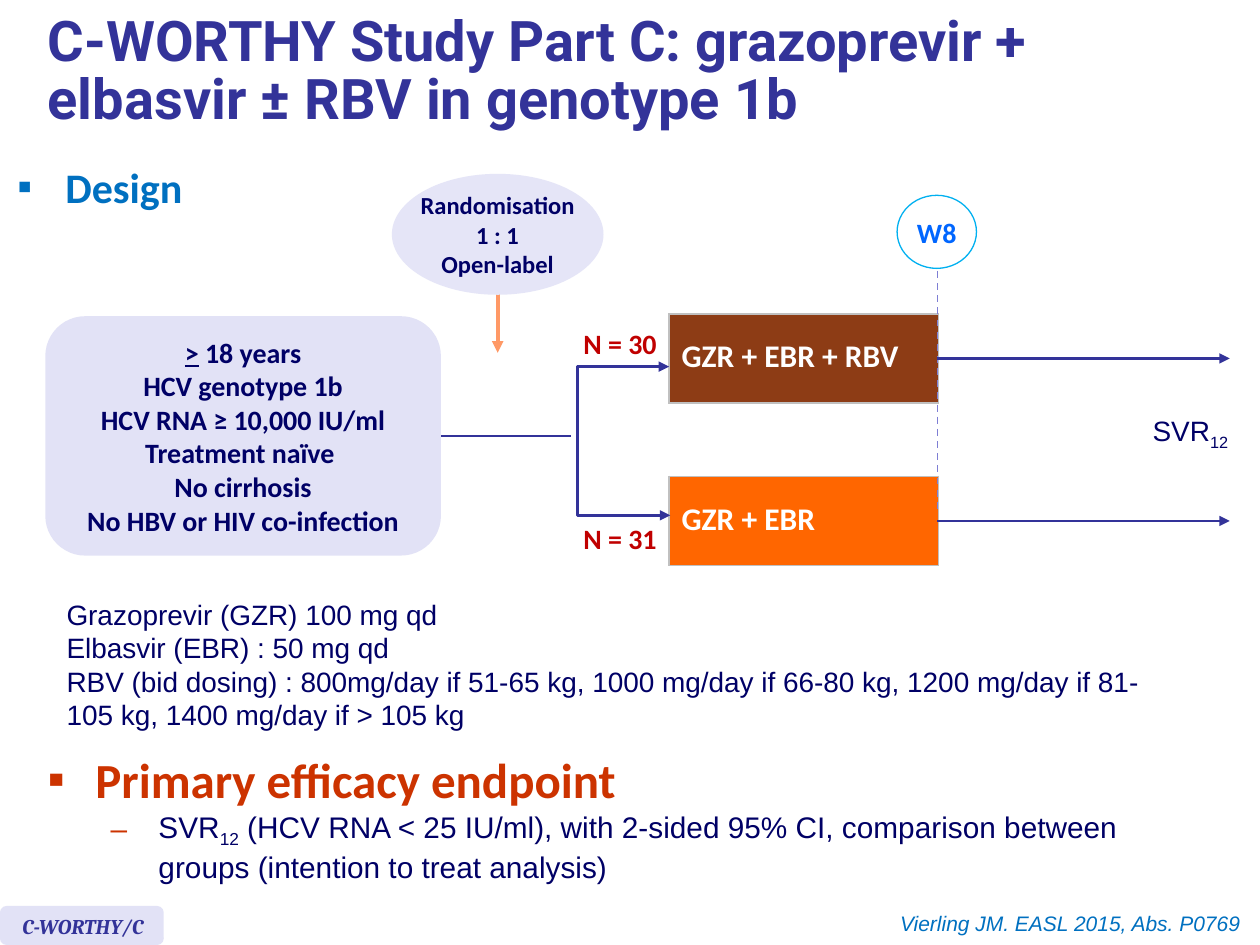
from dataclasses import dataclass

from lxml import etree
from pptx import Presentation
from pptx.dml.color import RGBColor
from pptx.enum.dml import MSO_LINE
from pptx.enum.shapes import MSO_CONNECTOR, MSO_SHAPE
from pptx.enum.text import MSO_ANCHOR, PP_ALIGN
from pptx.oxml.ns import qn
from pptx.util import Inches, Pt

LEFT, MID, RIGHT = PP_ALIGN.LEFT, PP_ALIGN.CENTER, PP_ALIGN.RIGHT
LINE, ELBOW = MSO_CONNECTOR.STRAIGHT, MSO_CONNECTOR.ELBOW
OVAL, ROUND = MSO_SHAPE.OVAL, MSO_SHAPE.ROUNDED_RECTANGLE


@dataclass(frozen=True)
class Style:
    size: float
    font: str
    color: str
    bold: bool = False
    italic: bool = False


class Theme:
    navy, sky, rust, white = "333399", "0070C0", "CC3300", "FFFFFF"
    pale, lilac, dash, peach = "E2E2F6", "E5E5F7", "7E7ED4", "FF9966"
    ring, grey, brown, orange = "00B0F0", "C0C0C0", "8D3C15", "FF6600"
    title = Style(32, "Roboto", navy, True)
    head = Style(24, "Calibri", sky, True)
    goal = Style(28, "Calibri", rust, True)
    point = Style(17, "Arial", "000066")
    body = Style(16, "Arial", "000066")
    entry = Style(16, "Calibri", "000066", True)
    split = Style(14, "Calibri", "000066", True)
    week = Style(16, "Calibri", "0066FF", True)
    arm = Style(18, "Calibri", white, True)
    count = Style(16, "Calibri", "C00000", True)
    tag = Style(12, "Cambria", navy, True, True)
    cite = Style(12, "Arial", sky, False, True)


def rgb(code):
    return RGBColor.from_string(code)


def add_run(para, text, style, under=False, sub=False):
    run = para.add_run()
    run.text = text
    font = run.font
    font.size, font.name = Pt(style.size), style.font
    font.bold, font.italic = style.bold, style.italic
    font.color.rgb = rgb(style.color)
    if under:
        font.underline = True
    if sub:
        font._element.set("baseline", "-25000")


def add_lines(frame, lines, style, align=LEFT):
    """Write one paragraph per line; a line is a text or a list of (text, run options)."""
    for i, line in enumerate(lines):
        para = frame.paragraphs[0] if i == 0 else frame.add_paragraph()
        para.alignment = align
        for text, opts in [(line, {})] if isinstance(line, str) else line:
            add_run(para, text, style, **opts)


def add_bullet(para, mark, color, left):
    props = para._p.get_or_add_pPr()
    props.set("marL", str(Inches(left)))
    props.set("indent", str(-Inches(0.38)))
    tint = etree.SubElement(props, qn("a:buClr"))
    etree.SubElement(tint, qn("a:srgbClr"), val=color)
    etree.SubElement(props, qn("a:buFont"), typeface="Arial")
    etree.SubElement(props, qn("a:buChar"), char=mark)


def add_text(slide, box, lines, style, align=LEFT, wrap=True):
    frame = slide.shapes.add_textbox(*map(Inches, box)).text_frame
    frame.word_wrap = wrap
    add_lines(frame, lines, style, align)
    return frame


def add_form(slide, kind, box, fill, lines=(), style=None, edge=None, wrap=True):
    form = slide.shapes.add_shape(kind, *map(Inches, box))
    form.shadow.inherit = False
    form.fill.solid()
    form.fill.fore_color.rgb = rgb(fill)
    if edge:
        form.line.color.rgb = rgb(edge)
        form.line.width = Pt(0.75)
    else:
        form.line.fill.background()
    frame = form.text_frame
    frame.word_wrap = wrap
    frame.vertical_anchor = MSO_ANCHOR.MIDDLE
    add_lines(frame, lines, style, MID)


def add_link(slide, ends, color, width, heads=(), kind=LINE):
    """Draw a connector; heads names the ends with an arrow (headEnd, tailEnd)."""
    link = slide.shapes.add_connector(kind, *map(Inches, ends))
    link.line.color.rgb = rgb(color)
    link.line.width = Pt(width)
    stroke = link.line._get_or_add_ln()
    for head in heads:
        etree.SubElement(stroke, qn("a:" + head), type="triangle")
    etree.SubElement(link._element.spPr, qn("a:effectLst"))
    return link


def add_fork(slide, x, top, low, reach):
    """Join two arrow tips at x by a bracket that reaches out to the left."""
    wide = 0.01
    fork = add_link(slide, (x, top, x + wide, low), Theme.navy, 1.5,
                    ("headEnd", "tailEnd"), ELBOW)
    guides = fork._element.spPr.find(qn("a:prstGeom")).get_or_add_avLst()
    ratio = round(-reach / wide * 100000)
    etree.SubElement(guides, qn("a:gd"), name="adj1", fmla=f"val {ratio}")


def add_arm(slide, box, name, fill):
    table_form = slide.shapes.add_table(1, 1, *map(Inches, box))
    cell = table_form.table.cell(0, 0)
    cell.vertical_anchor = MSO_ANCHOR.MIDDLE
    add_lines(cell.text_frame, [name], Theme.arm)
    cell.text_frame.paragraphs[0].line_spacing = 0.8
    props = cell._tc.get_or_add_tcPr()
    for side in ("lnL", "lnR", "lnT", "lnB"):
        edge = etree.SubElement(props, qn("a:" + side), w=str(Pt(1)))
        paint = etree.SubElement(edge, qn("a:solidFill"))
        etree.SubElement(paint, qn("a:srgbClr"), val=Theme.grey)
    cell.fill.solid()
    cell.fill.fore_color.rgb = rgb(fill)


def add_title(slide, box):
    frame = add_text(slide, box, ["C-WORTHY Study Part C: grazoprevir + elbasvir ± RBV in genotype 1b"],
                     Theme.title)
    frame.paragraphs[0].line_spacing = 0.85


def add_design(slide, x, y):
    """Place the heading and trial flow from their top left corner."""
    head = add_text(slide, (x, y, 1.98, 0.63), ["Design"], Theme.head)
    add_bullet(head.paragraphs[0], "▪", Theme.sky, 0.38)

    arm_x, end_x, wide, high = x + 5.27, x + 7.4, 2.14, 0.71
    tops = [y + 1.26 + i * 1.29 for i in range(2)]
    arms = [("GZR + EBR + RBV", Theme.brown), ("GZR + EBR", Theme.orange)]
    for top, (name, fill) in zip(tops, arms):
        add_arm(slide, (arm_x, top, wide, high), name, fill)
    for top, count in ((y + 1.31, "N = 30"), (y + 2.86, "N = 31")):
        add_text(slide, (arm_x - 0.79, top, 0.79, 0.37), [count], Theme.count, RIGHT, False)

    mark = add_link(slide, (end_x, y + 0.92, end_x, y + 2.84), Theme.dash, 1)
    mark.line.dash_style = MSO_LINE.DASH
    add_form(slide, OVAL, (end_x - 0.32, y + 0.32, 0.63, 0.58), Theme.white,
             ["W8"], Theme.week, Theme.ring, False)
    for top in tops:
        mid = top + high / 2
        add_link(slide, (end_x, mid, end_x + 2.32, mid), Theme.navy, 1.5, ("tailEnd",))

    add_form(slide, ROUND, (x + 0.32, y + 1.28, 3.14, 1.9), Theme.pale, [
        [(">", {"under": True}), (" 18 years", {})],
        "HCV genotype 1b",
        "HCV RNA ≥ 10,000 IU/ml",
        "Treatment naïve ",
        "No cirrhosis",
        "No HBV or HIV co-infection",
    ], Theme.entry)
    add_link(slide, (x + 3.91, y + 0.95, x + 3.91, y + 1.57), Theme.peach, 2.25, ("tailEnd",))
    add_form(slide, OVAL, (x + 3.07, y + 0.15, 1.68, 0.96), Theme.lilac,
             ["Randomisation", "1 : 1", "Open-label"], Theme.split, wrap=False)
    add_fork(slide, arm_x, y + 1.68, y + 2.86, 0.74)
    add_link(slide, (x + 3.46, y + 2.23, x + 4.49, y + 2.23), Theme.navy, 1.5)
    add_text(slide, (x + 9.01, y + 2, 0.83, 0.37),
             [[("SVR", {}), ("12", {"sub": True})]], Theme.body, wrap=False)


def add_doses(slide, box):
    add_text(slide, box, [
        "Grazoprevir (GZR) 100 mg qd",
        "Elbasvir (EBR) : 50 mg qd",
        "RBV (bid dosing) : 800mg/day if 51-65 kg, 1000 mg/day if 66-80 kg, "
        "1200 mg/day if 81-105 kg, 1400 mg/day if > 105 kg",
    ], Theme.body)


def add_goal(slide, box):
    frame = add_text(slide, box, ["Primary efficacy endpoint"], Theme.goal)
    add_bullet(frame.paragraphs[0], "▪", Theme.rust, 0.38)
    para = frame.add_paragraph()
    para.level = 1
    add_bullet(para, "–", Theme.rust, 0.88)
    add_run(para, "SVR", Theme.point)
    add_run(para, "12", Theme.point, sub=True)
    add_run(para, " (HCV RNA < 25 IU/ml), with 2-sided 95% CI, comparison between "
                  "groups (intention to treat analysis)", Theme.point)


def add_foot(slide, y):
    add_form(slide, ROUND, (0, y, 1.3, 0.31), Theme.pale)
    add_text(slide, (0.08, y + 0.01, 1.22, 0.3), ["C-WORTHY/C"], Theme.tag)
    add_text(slide, (5.48, y - 0.01, 4.51, 0.3), ["Vierling JM. EASL 2015, Abs. P0769 "],
             Theme.cite, RIGHT)


def main():
    deck = Presentation()
    deck.slide_width, deck.slide_height = Inches(10), Inches(7.5)
    slide = deck.slides.add_slide(deck.slide_layouts[6])
    add_title(slide, (0.28, 0.08, 9.13, 1.07))
    add_design(slide, 0.04, 1.23)
    add_doses(slide, (0.43, 4.69, 9.06, 1.18))
    add_goal(slide, (0.28, 5.9, 9.37, 1.14))
    add_foot(slide, 7.19)
    deck.save("out.pptx")


if __name__ == "__main__":
    main()
